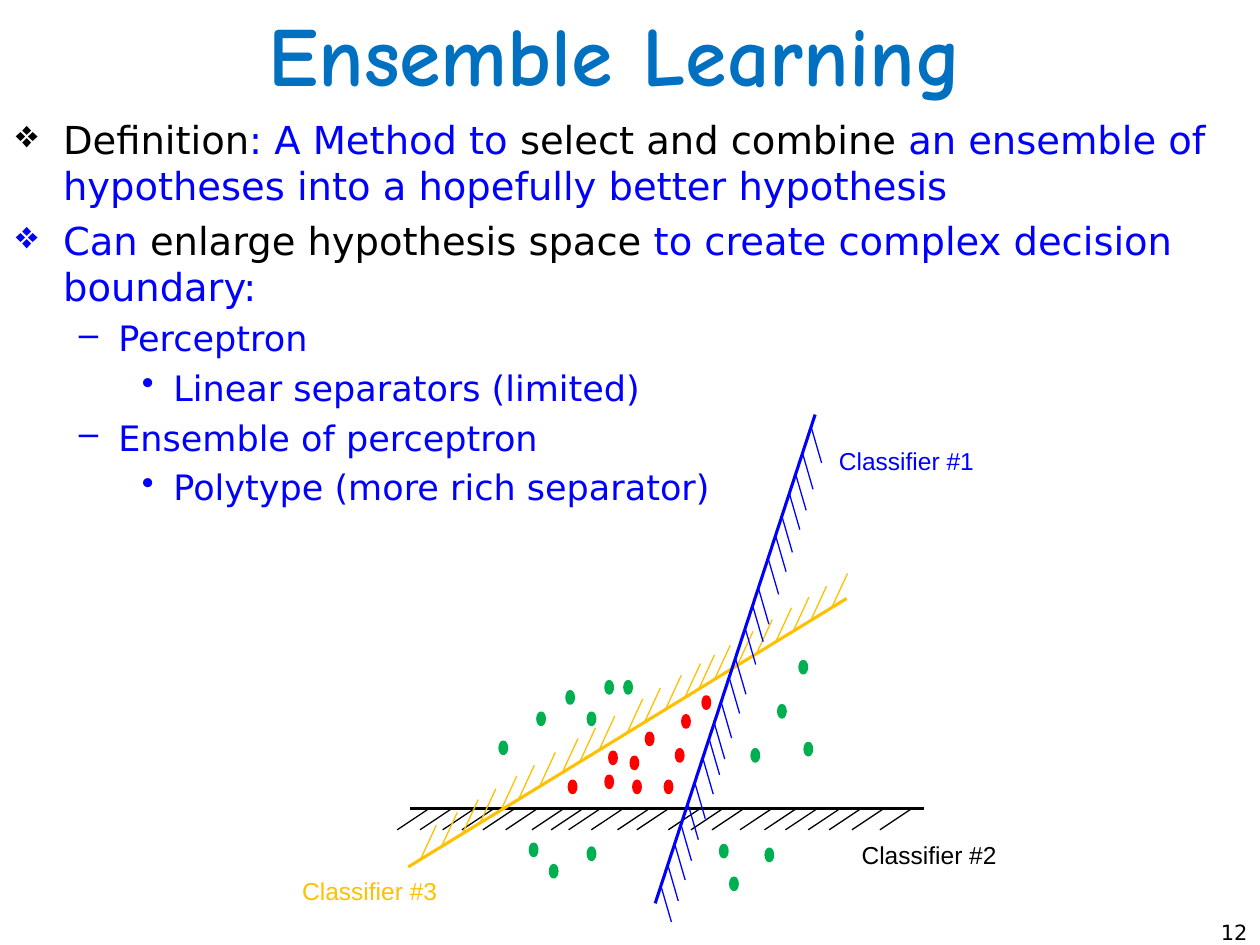
from pptx import Presentation
from pptx.dml.color import RGBColor
from pptx.enum import shapes, text
from pptx.oxml import xmlchemy as xml
from pptx.oxml.ns import qn
from pptx.util import Pt

COLORS = {"title": "0070C0", "blue": "0000FF", "black": "000000",
          "gold": "FFC000", "red": "FF0000", "green": "00B050"}
BODY_FONT = "DejaVu Sans"
LEVELS = [("❖", 27, 27, 22), ("–", 58.5, 22.5, 20), ("•", 90, 18, 20)]
POINTS = [
    (0, [("Definition", "black"), (": A Method to ", "blue"),
         ("select and combine", "black"),
         (" an ensemble of hypotheses into a hopefully better hypothesis", "blue")]),
    (0, [("Can ", "blue"), ("enlarge hypothesis space", "black"),
         (" to create complex decision boundary:", "blue")]),
    (1, [("Perceptron", "blue")]),
    (2, [("Linear separators (limited)", "blue")]),
    (1, [("Ensemble of perceptron", "blue")]),
    (2, [("Polytype (more rich separator)", "blue")]),
]
CLASSIFIERS = [
    dict(label="Classifier #2", color="black", label_at=(320.3, 240.6),
         start=(69, 226.2), end=(362.8, 226.2), span=294, tick=(-18, 12),
         steps=[11, 24, 37, 48, 60, 73, 88, 99, 109, 122, 137, 148, 166, 179,
                191, 207, 221, 233, 246, 258, 271, 287]),
    dict(label="Classifier #3", color="gold", label_at=(0.6, 260.8),
         start=(68.3, 259.4), end=(318.8, 106), span=250.5, tick=(9, -19.5),
         steps=[7, 19, 31, 41, 53, 63, 75, 88, 98, 109, 125, 135, 147, 158,
                166, 175, 188, 199, 210, 220, 230, 242]),
    dict(label="Classifier #1", color="blue", label_at=(307.3, 15.3),
         start=(300.8, 0.9), end=(209.4, 280.2), span=279, tick=(6, 20.7),
         steps=[7, 22, 34, 45, 58, 69, 82, 99, 109, 122, 139, 150, 164, 176,
                185, 196, 210, 222, 234, 245, 257, 269]),
]
SAMPLES = {
    "red": [(195.7, 196.7), (215.2, 210.4), (221.6, 192.4), (197.2, 210.4),
            (236.8, 162.2), (181.3, 207.5), (225.2, 173), (204.4, 183),
            (183.5, 193.8), (160.4, 210.4)],
    "green": [(120.8, 188.1), (142.4, 171.5), (181.3, 153.5), (264.8, 192.4),
              (280, 167.2), (272.8, 249.3), (246.8, 247.1), (171.2, 248.6),
              (138.1, 246.4), (295.1, 188.8), (292.2, 142), (159, 159.3),
              (171.2, 171.5), (192.1, 153.5), (149.6, 258.6), (252.6, 265.8)],
}


def rgb(color):
    """Return the named colour."""
    return RGBColor.from_string(COLORS[color])


def add_frame(slide, box, wrap=True):
    """Add a text box and return its text frame."""
    frame = slide.shapes.add_textbox(*map(Pt, box)).text_frame
    frame.word_wrap = wrap
    return frame


def add_run(paragraph, words, font, size, color, bold=False):
    """Append one styled run."""
    run = paragraph.add_run()
    run.text = words
    run.font.name, run.font.size, run.font.bold = font, Pt(size), bold
    run.font.color.rgb = rgb(color)


def add_title(slide, box):
    """Place the centred heading."""
    frame = add_frame(slide, box)
    frame.vertical_anchor = text.MSO_ANCHOR.MIDDLE
    heading = frame.paragraphs[0]
    heading.alignment = text.PP_ALIGN.CENTER
    add_run(heading, "Ensemble Learning ", "Comic Neue", 48, "title", True)


def add_points(slide, box):
    """Place the bulleted outline."""
    frame = add_frame(slide, box)
    for index, (level, runs) in enumerate(POINTS):
        point = frame.add_paragraph() if index else frame.paragraphs[0]
        bullet, margin, hang, size = LEVELS[level]
        point.level = level
        point.space_before = Pt(size * 0.22)
        props = point._p.get_or_add_pPr()
        props.set("marL", str(Pt(margin)))
        props.set("indent", str(-Pt(hang)))
        mark = xml.OxmlElement("a:buChar")
        mark.set("char", bullet)
        props.append(mark)
        for words, color in runs:
            add_run(point, words, BODY_FONT, size, color)


def add_line(slide, start, end, color, width):
    """Draw a straight line without a shadow."""
    line = slide.shapes.add_connector(
        shapes.MSO_CONNECTOR.STRAIGHT, *map(Pt, (*start, *end)))
    line.line.color.rgb = rgb(color)
    line.line.width = Pt(width)
    line._element.find(qn("p:spPr")).append(xml.OxmlElement("a:effectLst"))


def add_boundary(slide, left, top, start, end, span, tick, steps, color):
    """Draw a decision boundary with hatching on one side."""
    x1, y1 = left + start[0], top + start[1]
    x2, y2 = left + end[0], top + end[1]
    add_line(slide, (x1, y1), (x2, y2), color, 1.75)
    for step in steps:
        x = x1 + (x2 - x1) * step / span
        y = y1 + (y2 - y1) * step / span
        add_line(slide, (x, y), (x + tick[0], y + tick[1]), color, 0.75)


def add_sample(slide, x, y, color):
    """Draw one data point."""
    dot = slide.shapes.add_shape(
        shapes.MSO_SHAPE.OVAL, Pt(x), Pt(y), Pt(3.6), Pt(6.5))
    dot.shadow.inherit = False
    dot.fill.solid()
    dot.fill.fore_color.rgb = rgb(color)
    dot.line.color.rgb = rgb(color)
    dot.line.width = Pt(2)


def add_diagram(slide, left, top):
    """Draw the three classifiers and the samples they separate."""
    for classifier in CLASSIFIERS:
        parts = dict(classifier)
        label, (x, y) = parts.pop("label"), parts.pop("label_at")
        add_boundary(slide, left, top, **parts)
        frame = add_frame(slide, (left + x, top + y, 92, 24.5), wrap=False)
        add_run(frame.paragraphs[0], label, "Arial", 14, parts["color"])
    for color, places in SAMPLES.items():
        for x, y in places:
            add_sample(slide, left + x, top + y, color)


def add_page_number(slide, box):
    """Place the page number at the right."""
    number = add_frame(slide, box).paragraphs[0]
    number.alignment = text.PP_ALIGN.RIGHT
    add_run(number, "12", BODY_FONT, 12, "black")


def main():
    """Build and save the slide."""
    deck = Presentation()
    deck.slide_width, deck.slide_height = Pt(720), Pt(540)
    slide = deck.slides.add_slide(deck.slide_layouts[6])
    add_title(slide, (0, 0, 720, 60))
    add_points(slide, (2, 62.6, 712, 251))
    add_page_number(slide, (675.4, 522, 44.6, 18))
    add_diagram(slide, 165, 236)
    deck.save("out.pptx")


if __name__ == "__main__":
    main()
